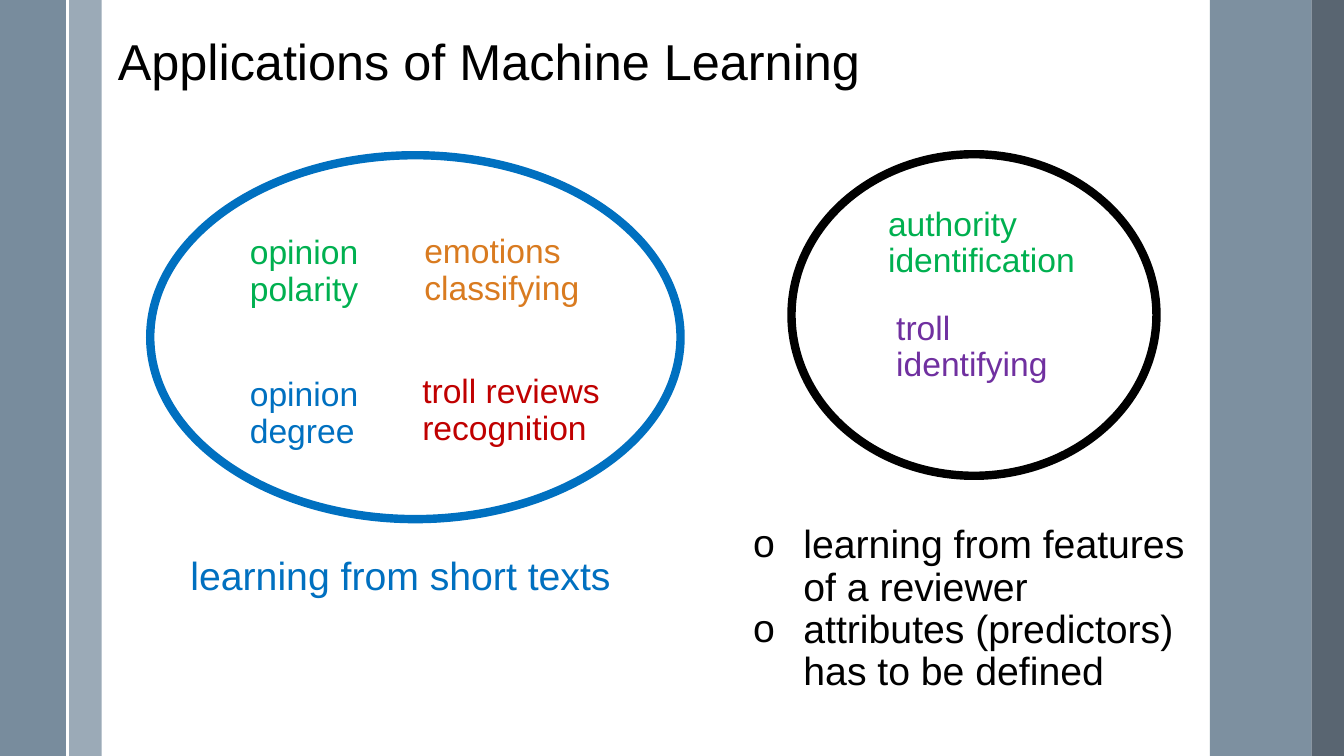
from dataclasses import dataclass

from lxml.etree import SubElement
from pptx import Presentation
from pptx.dml.color import RGBColor
from pptx.enum.shapes import MSO_CONNECTOR, MSO_SHAPE
from pptx.enum.text import MSO_ANCHOR
from pptx.oxml.ns import qn
from pptx.util import Inches, Pt


@dataclass(frozen=True)
class Theme:
    """Colours, font and type sizes of the slide."""
    font: str = "Arial"
    title: int = 36
    label: int = 24
    note: int = 28
    black: str = "000000"
    white: str = "FFFFFF"
    green: str = "00B050"
    blue: str = "0070C0"
    orange: str = "D97B20"
    red: str = "C00000"
    purple: str = "7030A0"
    pale: str = "9BAAB7"
    slate: str = "6A8093"
    dark: str = "475562"


class Painter:
    """Draws styled elements on the current slide."""

    def __init__(self, theme, slide):
        self.theme = theme
        self.shapes = slide.shapes

    def band(self, left, width, color, alpha=100):
        box = map(Inches, (left, 0, width, 7.5))
        band = self.shapes.add_shape(MSO_SHAPE.RECTANGLE, *box)
        band.shadow.inherit = False
        band.line.fill.background()
        band.fill.solid()
        band.fill.fore_color.rgb = RGBColor.from_string(color)
        if alpha < 100:
            tone = band.fill._xPr.find(".//" + qn("a:srgbClr"))
            SubElement(tone, qn("a:alpha"), val=str(alpha * 1000))

    def rule(self, left, color, width):
        ends = map(Inches, (left, 0, left, 7.5))
        rule = self.shapes.add_connector(MSO_CONNECTOR.STRAIGHT, *ends)
        rule.line.color.rgb = RGBColor.from_string(color)
        rule.line.width = Pt(width)
        SubElement(rule._element.spPr, qn("a:effectLst"))

    def ring(self, box, color):
        ring = self.shapes.add_shape(MSO_SHAPE.OVAL, *map(Inches, box))
        ring.shadow.inherit = False
        ring.fill.background()
        ring.line.color.rgb = RGBColor.from_string(color)
        ring.line.width = Pt(6)

    def text(self, box, lines, size, color, anchor=MSO_ANCHOR.TOP, bullet=None):
        frame = self.shapes.add_textbox(*map(Inches, box)).text_frame
        frame.word_wrap = True
        frame.vertical_anchor = anchor
        frame.text = "\n".join(lines)
        style = {"name": self.theme.font, "size": Pt(size)}
        for para in frame.paragraphs:
            para.line_spacing = 0.9
            font = para.runs[0].font
            for key, value in style.items():
                setattr(font, key, value)
            font.color.rgb = RGBColor.from_string(color)
            if bullet:
                props = para._p.get_or_add_pPr()
                props.set("marL", str(Inches(0.5)))
                props.set("indent", str(Inches(-0.5)))
                SubElement(props, qn("a:buFont"), typeface=self.theme.font)
                SubElement(props, qn("a:buChar"), char=bullet)


def main():
    deck = Presentation()
    deck.slide_width, deck.slide_height = Inches(13.33), Inches(7.5)
    look = Theme()
    draw = Painter(look, deck.slides.add_slide(deck.slide_layouts[6]))

    draw.band(0.68, 0.33, look.pale)
    draw.band(0, 0.67, look.slate, 90)
    draw.rule(0.67, look.white, 1.5)
    draw.band(12, 1.01, look.slate, 87)
    draw.band(13.01, 0.32, look.dark, 90)

    draw.text((1.07, -0.04, 10.7, 1.36), ["Applications of Machine Learning"],
              look.title, look.black, MSO_ANCHOR.MIDDLE)

    labels = [
        (2.38, 2.29, 1.42, "opinion polarity", look.green),
        (2.38, 3.7, 1.42, "opinion degree", look.blue),
        (4.11, 2.28, 1.89, "emotions classifying", look.orange),
        (4.09, 3.67, 2.06, "troll reviews recognition", look.red),
        (8.71, 2.01, 2.16, "authority identification", look.green),
        (8.79, 3.04, 2.19, "troll identifying", look.purple),
    ]
    for left, top, width, words, color in labels:
        draw.text((left, top, width, 1.02), [words], look.label, color)

    draw.text((1.79, 5.47, 4.62, 0.63), ["learning from short texts"],
              look.note, look.blue)
    draw.ring((1.49, 1.54, 5.26, 3.61), look.blue)
    draw.ring((7.85, 1.53, 3.62, 3.19), look.black)
    draw.text((7.37, 5.16, 4.65, 1.9),
              ["learning from features of a reviewer",
               "attributes (predictors) has to be defined"],
              look.note, look.black, bullet="o")

    deck.save("out.pptx")


if __name__ == "__main__":
    main()
